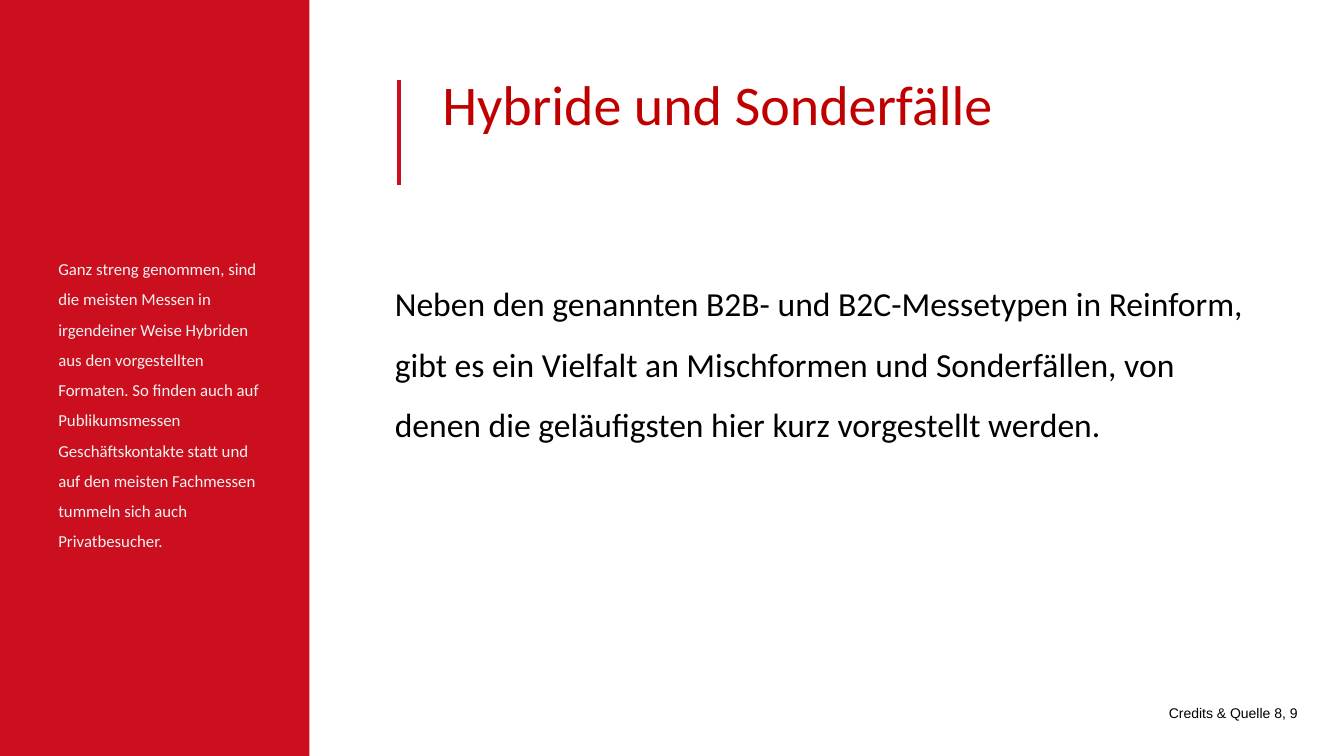
"""Build the slide on hybrid and special trade fair formats."""
import pptx
import pptx.util
import pptx.dml.color
import pptx.enum.shapes
import pptx.enum.text
import pptx.oxml.ns
import lxml.etree

Pt = pptx.util.Pt
ALIGN = pptx.enum.text.PP_ALIGN
HUES = {"red": "CB0F1E", "title": "C00000", "body": "000000", "side": "F2F2F2"}
SIZE = (960, 540)
PANEL = (0, 0, 221, 540)
RULE = (285.1, 56.9, 285.1, 132.5)
TEXTS = [
    ("Neben den genannten B2B- und B2C-Messetypen in Reinform, gibt es ein "
     "Vielfalt an Mischformen und Sonderfällen, von denen die geläufigsten "
     "hier kurz vorgestellt werden.",
     (275, 184.3, 631.4, 133.9), "Calibri", 24, "body", 1.5, ALIGN.LEFT),
    ("Ganz streng genommen, sind die meisten Messen in irgendeiner Weise "
     "Hybriden aus den vorgestellten Formaten. So finden auch auf "
     "Publikumsmessen Geschäftskontakte statt und auf den meisten Fachmessen "
     "tummeln sich auch Privatbesucher.",
     (34.6, 174.2, 163.4, 223.2), "Calibri", 12, "side", 1.5, ALIGN.LEFT),
    ("Hybride und Sonderfälle",
     (308.9, 46.1, 537.8, 139), "Calibri", 40, "title", 1, ALIGN.LEFT),
    ("Credits & Quelle 8, 9",
     (827.3, 499.7, 106.6, 19.4), "Arial", 10, "body", 1, ALIGN.RIGHT),
]


def hue(name):
    return pptx.dml.color.RGBColor.from_string(HUES[name])


def add_text(slide, text, place, font, size, tint, lead, align):
    frame = slide.shapes.add_textbox(*map(Pt, place)).text_frame
    frame.word_wrap = True
    frame.text = text
    para = frame.paragraphs[0]
    para.line_spacing = lead
    para.alignment = align
    face = para.runs[0].font
    face.name = font
    face.size = Pt(size)
    face.color.rgb = hue(tint)


def main():
    deck = pptx.Presentation()
    deck.slide_width, deck.slide_height = map(Pt, SIZE)
    slide = deck.slides.add_slide(deck.slide_layouts[6])

    panel = slide.shapes.add_shape(
        pptx.enum.shapes.MSO_SHAPE.RECTANGLE, *map(Pt, PANEL))
    panel.shadow.inherit = False
    panel.fill.solid()
    panel.fill.fore_color.rgb = hue("red")
    panel.line.fill.background()

    for item in TEXTS:
        add_text(slide, *item)

    rule = slide.shapes.add_connector(
        pptx.enum.shapes.MSO_CONNECTOR.STRAIGHT, *map(Pt, RULE))
    rule.line.color.rgb = hue("red")
    rule.line.width = Pt(3)
    props = rule.element.find(pptx.oxml.ns.qn("p:spPr"))
    lxml.etree.SubElement(props, pptx.oxml.ns.qn("a:effectLst"))

    deck.save("out.pptx")


if __name__ == "__main__":
    main()
